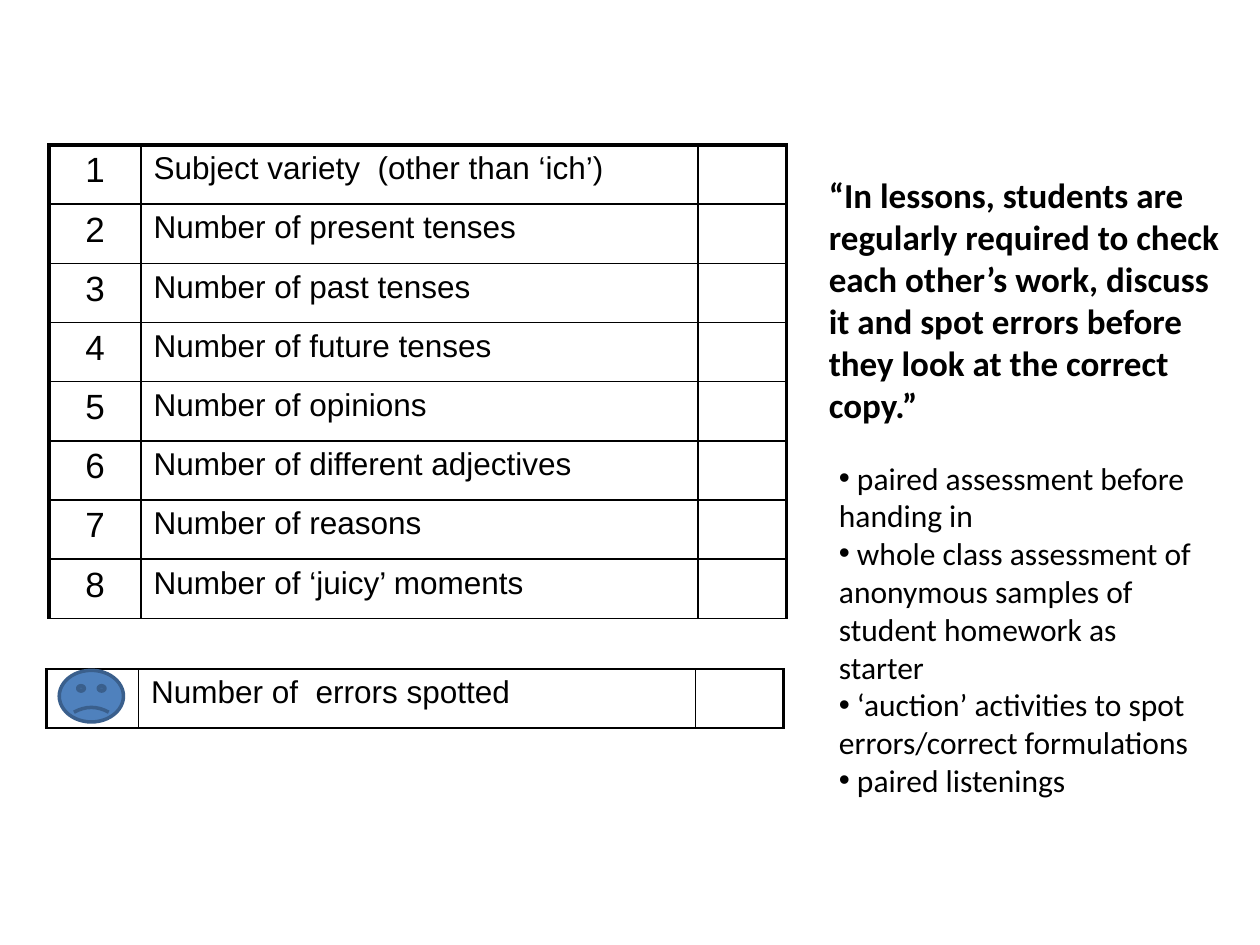
from dataclasses import dataclass

from lxml import etree
from pptx import Presentation
from pptx.dml.color import RGBColor
from pptx.enum.shapes import MSO_SHAPE
from pptx.enum.text import PP_ALIGN
from pptx.oxml.ns import qn
from pptx.util import Inches, Pt

SMILEY = MSO_SHAPE.SMILEY_FACE
CENTER = PP_ALIGN.CENTER
LEFT = PP_ALIGN.LEFT

BLACK = "000000"
COLUMN_WIDTHS = (0.73, 4.42, 0.7)
ROW_HEIGHT = 0.47
THIN, THICK = 1, 2.25

CRITERIA = (
    "Subject variety  (other than ‘ich’)",
    "Number of present tenses",
    "Number of past tenses",
    "Number of future tenses",
    "Number of opinions",
    "Number of different adjectives",
    "Number of reasons",
    "Number of ‘juicy’ moments",
)
QUOTE = (
    "“In lessons, students are regularly required to check each other’s work, "
    "discuss it and spot errors before they look at the correct copy.”"
)
ACTIVITIES = (
    " paired assessment before handing in",
    " whole class assessment of anonymous samples of student homework as starter",
    " ‘auction’ activities to spot errors/correct formulations",
    " paired listenings",
)


@dataclass(frozen=True)
class Checklist:
    left: float
    top: float
    rows: tuple
    top_border: float


@dataclass(frozen=True)
class TextBlock:
    left: float
    top: float
    width: float
    height: float
    paragraphs: tuple
    size: int
    bold: bool = False
    bullet: bool = False


CHECKLISTS = (
    Checklist(0.39, 1.15, tuple((str(number), label, "") for number, label in enumerate(CRITERIA, 1)), THICK),
    Checklist(0.37, 5.31, (("", "Number of  errors spotted", ""),), THIN),
)
TEXT_BLOCKS = (
    TextBlock(6.48, 1.33, 3.36, 2.12, (QUOTE,), 20, bold=True),
    TextBlock(6.56, 3.59, 3.05, 3.43, ACTIVITIES, 18, bullet=True),
)


def color(value: str) -> RGBColor:
    return RGBColor.from_string(value)


def format_paragraph(paragraph, font_name: str, size: int, bold: bool = False) -> None:
    paragraph.font.name = font_name
    paragraph.font.size = Pt(size)
    paragraph.font.bold = bold
    paragraph.font.color.rgb = color(BLACK)


def set_borders(cell, left: float, right: float, top: float, bottom: float) -> None:
    """Put solid black borders, with widths in points, before the cell's fill."""
    properties = cell._tc.get_or_add_tcPr()
    widths = {"a:lnL": left, "a:lnR": right, "a:lnT": top, "a:lnB": bottom}
    for position, (tag, width) in enumerate(widths.items()):
        line = etree.Element(qn(tag), w=str(Pt(width)))
        fill = etree.SubElement(line, qn("a:solidFill"))
        etree.SubElement(fill, qn("a:srgbClr"), val=BLACK)
        properties.insert(position, line)


def add_checklist(slide, checklist: Checklist) -> None:
    row_count, column_count = len(checklist.rows), len(COLUMN_WIDTHS)
    table = slide.shapes.add_table(
        row_count, column_count, Inches(checklist.left), Inches(checklist.top),
        Inches(sum(COLUMN_WIDTHS)), Inches(ROW_HEIGHT * row_count),
    ).table
    table.first_row = False
    table.horz_banding = False
    for column, width in zip(table.columns, COLUMN_WIDTHS):
        column.width = Inches(width)
    for row_index, texts in enumerate(checklist.rows):
        table.rows[row_index].height = Inches(ROW_HEIGHT)
        for column_index, text in enumerate(texts):
            is_number = column_index == 0
            cell = table.cell(row_index, column_index)
            cell.text = text
            cell.fill.background()
            paragraph = cell.text_frame.paragraphs[0]
            paragraph.alignment = CENTER if is_number else LEFT
            format_paragraph(paragraph, "Arial", 20 if is_number else 18)
            set_borders(
                cell,
                left=THICK if is_number else THIN,
                right=THICK if column_index == column_count - 1 else THIN,
                top=checklist.top_border if row_index == 0 else THIN,
                bottom=THIN,
            )


def add_bullet(paragraph) -> None:
    properties = paragraph._p.get_or_add_pPr()
    etree.SubElement(properties, qn("a:buFont"), typeface="Arial")
    etree.SubElement(properties, qn("a:buChar"), char="•")


def add_text_block(slide, block: TextBlock) -> None:
    text_frame = slide.shapes.add_textbox(
        Inches(block.left), Inches(block.top), Inches(block.width), Inches(block.height)
    ).text_frame
    text_frame.word_wrap = True
    text_frame.text = "\n".join(block.paragraphs)
    for paragraph in text_frame.paragraphs:
        if block.bullet:
            add_bullet(paragraph)
        format_paragraph(paragraph, "Calibri", block.size, block.bold)


def add_sad_face(slide) -> None:
    face = slide.shapes.add_shape(SMILEY, Inches(0.47), Inches(5.32), Inches(0.51), Inches(0.41))
    face.adjustments[0] = -0.047  # a negative value turns the mouth down
    face.shadow.inherit = False
    face.fill.solid()
    face.fill.fore_color.rgb = color("4F81BD")
    face.line.color.rgb = color("3A5F8C")
    face.line.width = Pt(2)


def main() -> None:
    presentation = Presentation()
    presentation.slide_width = Inches(10)
    presentation.slide_height = Inches(7.5)
    slide = presentation.slides.add_slide(presentation.slide_layouts.get_by_name("Blank"))
    for checklist in CHECKLISTS:
        add_checklist(slide, checklist)
    for block in TEXT_BLOCKS:
        add_text_block(slide, block)
    add_sad_face(slide)
    presentation.save("out.pptx")


if __name__ == "__main__":
    main()
